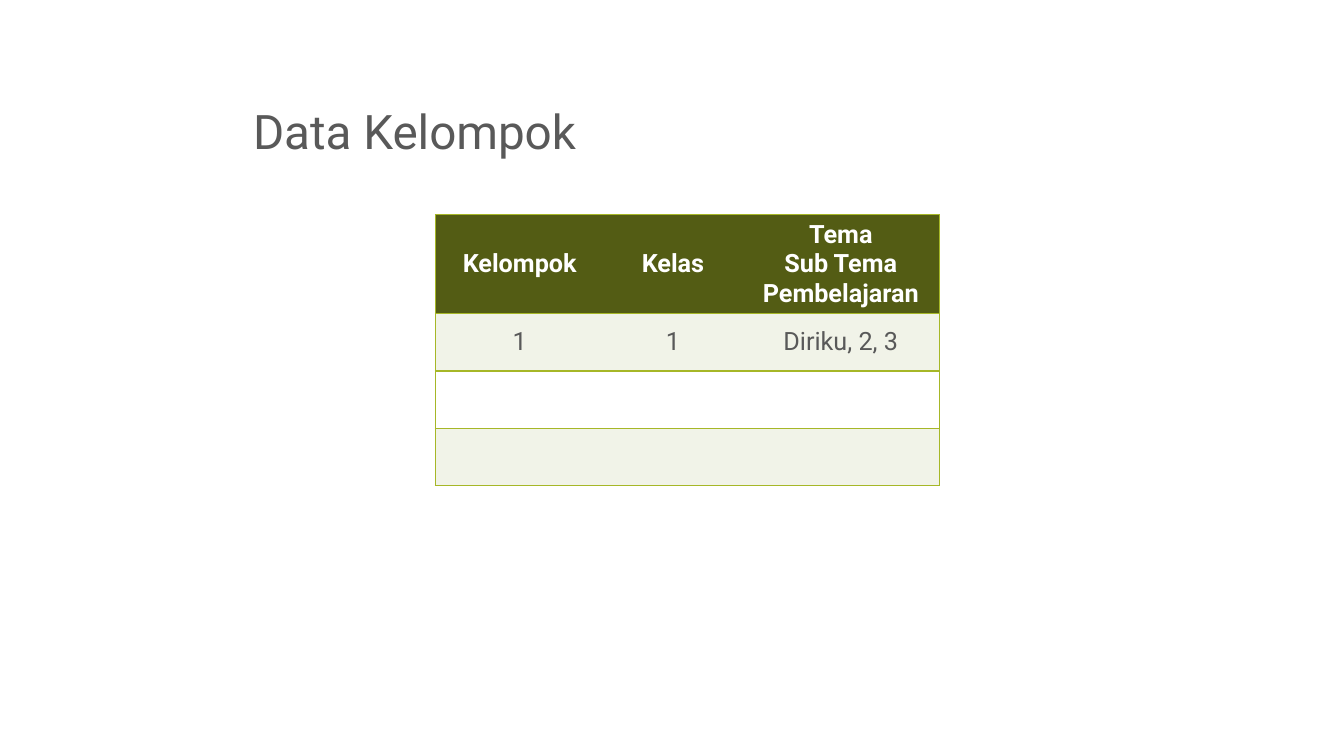
from lxml.etree import SubElement
from pptx import Presentation
from pptx.dml.color import RGBColor
from pptx.enum.text import MSO_ANCHOR, PP_ALIGN
from pptx.oxml.ns import qn
from pptx.util import Inches, Pt

GREEN, GREY = "A6B727", "595959"
WIDTHS = [1.67, 1.37, 1.96]
HEIGHTS = [0.98, 0.57, 0.57, 0.57]
BANDS = ["535C14", "F1F3E8", "FFFFFF", "F1F3E8"]
ROWS = [
    [["Kelompok"], ["Kelas"], ["Tema", "Sub Tema", "Pembelajaran"]],
    [["1"], ["1"], ["Diriku, 2, 3"]],
    [[], [], []],
    [[], [], []],
]


def paint(item, color):
    """Give a font or line colour from a hex string."""
    item.rgb = RGBColor.from_string(color)


def write(para, text, size, color, bold=False):
    """Add one formatted run to a paragraph."""
    run = para.add_run()
    run.text = text
    run.font.name = "Roboto"
    run.font.size = Pt(size)
    run.font.bold = bold
    paint(run.font.color, color)


def edge(cell, side, color=None):
    """Draw one border of a cell, or hide it when no colour is given."""
    line = SubElement(cell._tc.get_or_add_tcPr(), qn(f"a:ln{side}"), w=str(Pt(1)))
    if color:
        fill = SubElement(line, qn("a:solidFill"))
        SubElement(fill, qn("a:srgbClr"), val=color)
    else:
        SubElement(line, qn("a:noFill"))


def add_title(slide, text):
    """Place and fill the title."""
    title = slide.shapes.title
    title.left, title.top = Inches(2.41), Inches(0.33)
    title.width, title.height = Inches(10.25), Inches(1.31)
    title.text_frame.vertical_anchor = MSO_ANCHOR.BOTTOM
    para = title.text_frame.paragraphs[0]
    para.alignment = PP_ALIGN.LEFT
    para.line_spacing = 0.9
    write(para, text, 34, GREY)


def fill_cell(cell, lines, band, head):
    """Fill a cell with its colour and centred lines."""
    cell.fill.solid()
    paint(cell.fill.fore_color, band)
    cell.vertical_anchor = MSO_ANCHOR.MIDDLE
    frame = cell.text_frame
    for i, text in enumerate(lines):
        para = frame.add_paragraph() if i else frame.paragraphs[0]
        para.alignment = PP_ALIGN.CENTER
        write(para, text, 18, "FFFFFF" if head else GREY, head)


def add_grid(slide):
    """Build the group table with outer and row borders."""
    frame = slide.shapes.add_table(
        len(ROWS), len(WIDTHS), Inches(4.32), Inches(2.13),
        Inches(sum(WIDTHS)), Inches(sum(HEIGHTS)))
    table = frame.table
    for col, width in zip(table.columns, WIDTHS):
        col.width = Inches(width)
    for row, height in zip(table.rows, HEIGHTS):
        row.height = Inches(height)
    last = len(WIDTHS) - 1
    for r, row in enumerate(ROWS):
        for c, lines in enumerate(row):
            cell = table.cell(r, c)
            edge(cell, "L", GREEN if c == 0 else None)
            edge(cell, "R", GREEN if c == last else None)
            edge(cell, "T", GREEN)
            edge(cell, "B", GREEN)
            fill_cell(cell, lines, BANDS[r], r == 0)


def main():
    """Build and save the slide."""
    deck = Presentation()
    deck.slide_width, deck.slide_height = Inches(13.33), Inches(7.5)
    slide = deck.slides.add_slide(deck.slide_layouts[5])
    add_title(slide, "Data Kelompok")
    add_grid(slide)
    deck.save("out.pptx")


if __name__ == "__main__":
    main()
